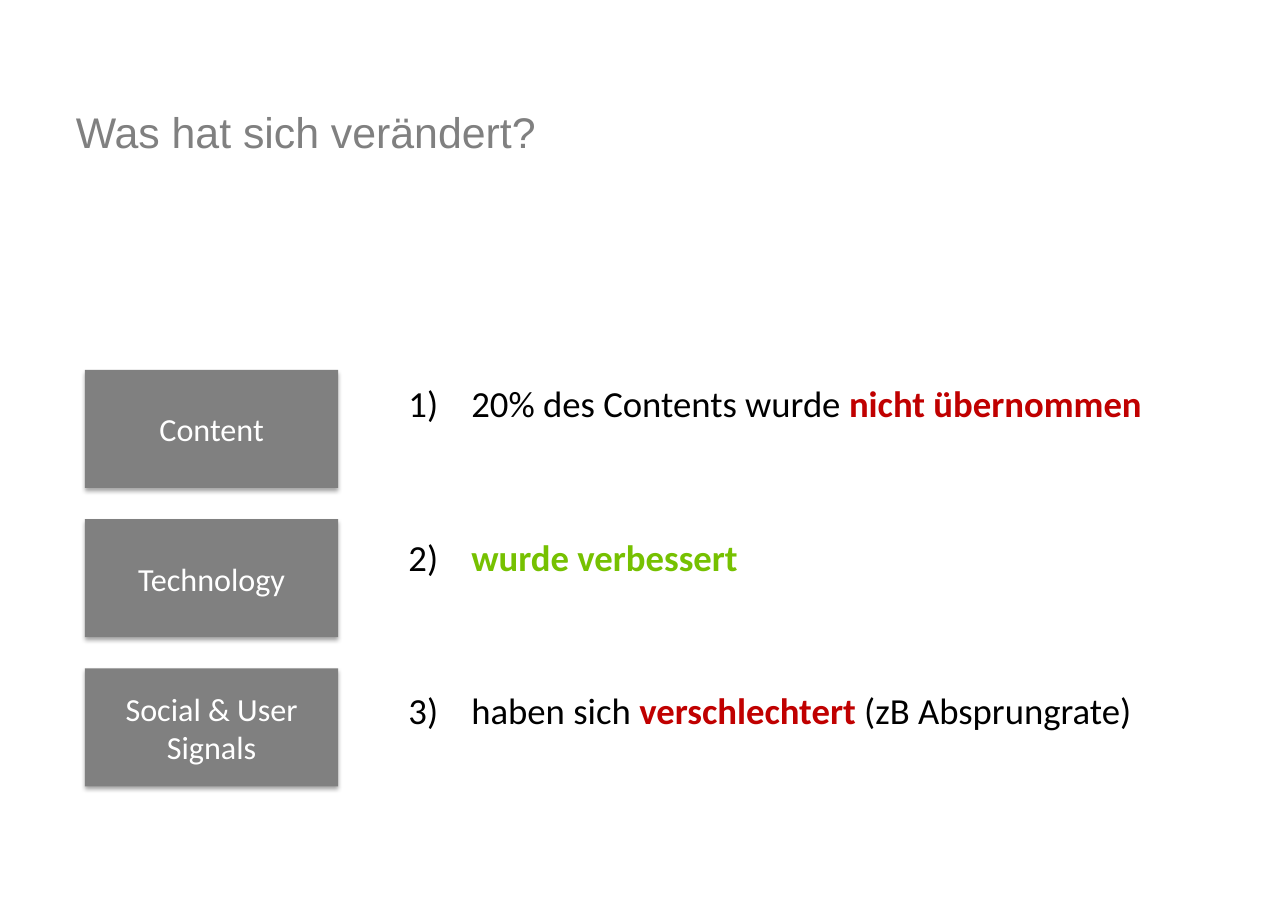
import pptx
import pptx.dml.color
import pptx.enum.shapes
import pptx.enum.text
import pptx.oxml
import pptx.oxml.ns
import pptx.util

Cm, Pt = pptx.util.Cm, pptx.util.Pt
ALIGN, ANCHOR = pptx.enum.text.PP_ALIGN, pptx.enum.text.MSO_ANCHOR

# Content: each finding is a list of (text, colour, bold) runs
TITLE = "Was hat sich verändert?"
FACTORS = ["Content", "Technology", "Social & User Signals"]
FINDINGS = [
    [("20% des Contents wurde ", "black", False), ("nicht übernommen", "red", True)],
    [("wurde verbessert", "green", True)],
    [("haben sich ", "black", False), ("verschlechtert ", "red", True),
     ("(zB Absprungrate)", "black", False)],
]
COLORS = {"grey": "808080", "white": "FFFFFF", "black": "000000",
          "red": "C00000", "green": "76C101"}

# Layout
BOX_LEFT, BOX_TOP, BOX_W, BOX_H, BOX_PITCH = 1.96, 8.53, 5.84, 2.72, 3.44
NUMBER_INDENT = Cm(1.45)
FINDING_GAP = Pt(71.6)
SHADOW = (
    f'<a:outerShdw {pptx.oxml.ns.nsdecls("a")} blurRad="{Pt(3.1)}" dist="{Pt(1.8)}" '
    'dir="5400000" rotWithShape="0"><a:srgbClr val="000000">'
    '<a:alpha val="35000"/></a:srgbClr></a:outerShdw>'
)


def rgb(name):
    return pptx.dml.color.RGBColor.from_string(COLORS[name])


def add_run(p, text, size, color, font="Calibri", bold=False):
    r = p.add_run()
    r.text = text
    r.font.name, r.font.size, r.font.bold = font, Pt(size), bold
    r.font.color.rgb = rgb(color)


def add_text_box(slide, left, top, width, height, anchor):
    tf = slide.shapes.add_textbox(Cm(left), Cm(top), Cm(width), Cm(height)).text_frame
    tf.word_wrap = True
    tf.vertical_anchor = anchor
    tf.margin_left = tf.margin_right = Cm(0.28)
    tf.margin_top = tf.margin_bottom = Cm(0.14)
    return tf


prs = pptx.Presentation()
prs.slide_width, prs.slide_height = Cm(29.7), Cm(21)
s = prs.slides.add_slide(prs.slide_layouts[6])

# Title
tf = add_text_box(s, 1.47, 0.84, 19.4, 4.4, ANCHOR.MIDDLE)
add_run(tf.paragraphs[0], TITLE, 28, "grey", font="Arial")

# Factor boxes
for i, factor in enumerate(FACTORS):
    sp = s.shapes.add_shape(
        pptx.enum.shapes.MSO_SHAPE.RECTANGLE,
        Cm(BOX_LEFT), Cm(BOX_TOP + i * BOX_PITCH), Cm(BOX_W), Cm(BOX_H))
    sp.fill.solid()
    sp.fill.fore_color.rgb = rgb("grey")
    sp.line.fill.background()
    sp.shadow.inherit = False
    effects = sp.element.spPr.find(pptx.oxml.ns.qn("a:effectLst"))
    effects.append(pptx.oxml.parse_xml(SHADOW))
    tf = sp.text_frame
    tf.word_wrap = True
    tf.vertical_anchor = ANCHOR.MIDDLE
    p = tf.paragraphs[0]
    p.alignment = ALIGN.CENTER
    add_run(p, factor, 21, "white")

# Numbered findings
tf = add_text_box(s, 9.14, 8.64, 20.55, 9.78, ANCHOR.TOP)
for i, runs in enumerate(FINDINGS):
    p = tf.add_paragraph() if i else tf.paragraphs[0]
    if i:
        p.space_before = FINDING_GAP
    pPr = p._p.get_or_add_pPr()
    pPr.set("marL", str(NUMBER_INDENT))
    pPr.set("indent", str(-NUMBER_INDENT))
    add_run(p, f"{i + 1})\t", 24, "black")
    for text, color, bold in runs:
        add_run(p, text, 24, color, bold=bold)

prs.save("out.pptx")
